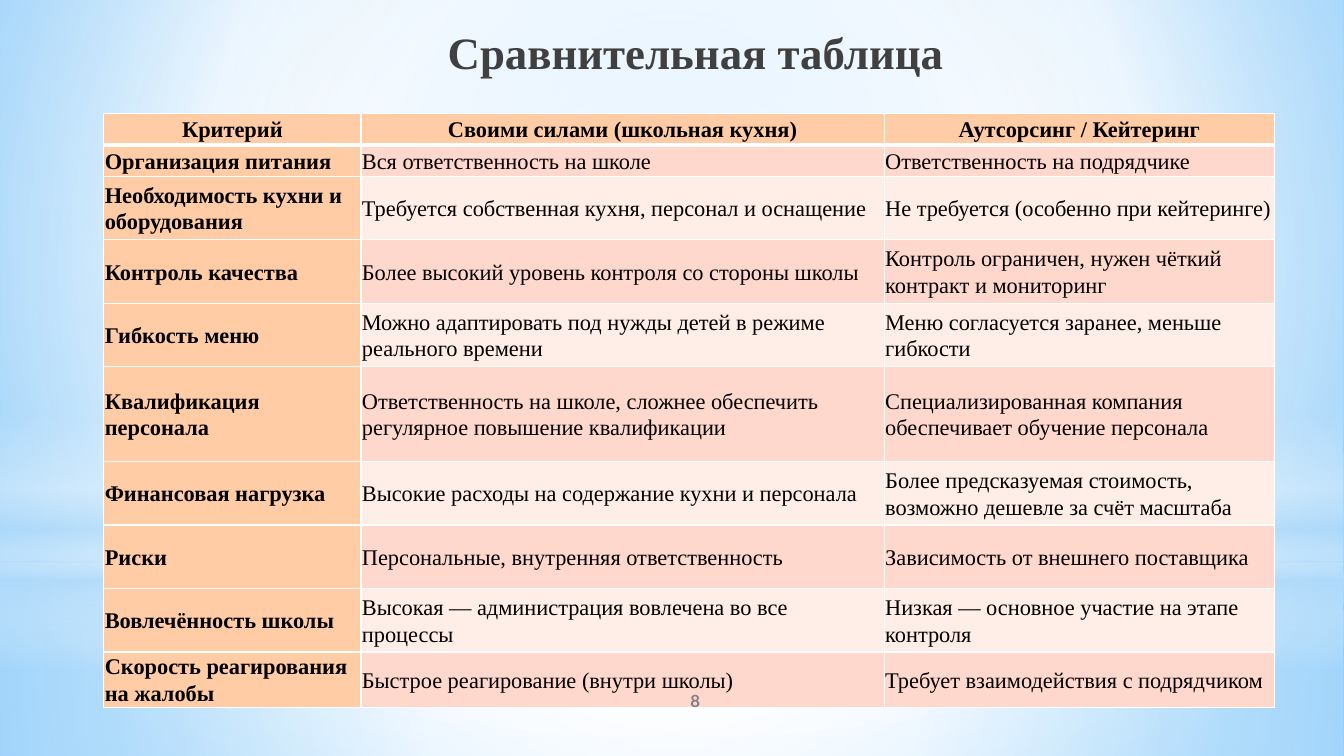
from lxml.etree import SubElement
from pptx import Presentation
from pptx.dml.color import RGBColor
from pptx.enum.shapes import MSO_SHAPE
from pptx.enum.text import MSO_ANCHOR, PP_ALIGN
from pptx.oxml import parse_xml
from pptx.oxml.ns import nsdecls, qn
from pptx.util import Inches, Pt

BLACK = RGBColor(0x00, 0x00, 0x00)
WHITE = RGBColor(0xFF, 0xFF, 0xFF)
DARK = RGBColor(0x40, 0x40, 0x40)
GREY = RGBColor(0x80, 0x80, 0x80)
ORANGE = RGBColor(0xFF, 0xCC, 0xA6)
PINK = RGBColor(0xFF, 0xD8, 0xCD)
PALE_PINK = RGBColor(0xFF, 0xED, 0xE8)
SKY = RGBColor(0xB4, 0xDC, 0xFA)
BLUE = RGBColor(0x9E, 0xD5, 0xFF)
DEEP_BLUE = RGBColor(0x5B, 0xB9, 0xFF)

SERIF = "Times New Roman"
WIDTH, HEIGHT = 13.33, 7.5
CENTRE = (50, 50, 50, 50)

# Each glow: shape, box, stops (position, colour, opacity), centre of the gradient
GLOWS = [
    (MSO_SHAPE.RECTANGLE, (0, 5.58, WIDTH, 1.92),
     [(0, WHITE, 91), (37, WHITE, 76), (100, SKY, 79)], CENTRE),
    (MSO_SHAPE.RECTANGLE, (0, 0, WIDTH, 5.58),
     [(0, WHITE, 89), (48, WHITE, 62), (100, SKY, 79)], CENTRE),
    (MSO_SHAPE.RECTANGLE, (0, 4.12, WIDTH, 2.5),
     [(0, WHITE, 0), (29, WHITE, 30), (45, SKY, 40), (55, WHITE, 26),
      (65, SKY, 60), (100, WHITE, 0)], None),
    (MSO_SHAPE.OVAL, (0, 1.75, WIDTH, 5.58),
     [(0, WHITE, 100), (56, WHITE, 0)], CENTRE),
]

COLUMNS = [2.55, 5.19, 3.87]
ROW_HEIGHTS = [0.31, 0.31, 0.63, 0.63, 0.63, 0.94, 0.63, 0.63, 0.63, 0.54]
ROWS = [
    ("Критерий", "Своими силами (школьная кухня)", "Аутсорсинг / Кейтеринг"),
    ("Организация питания", "Вся ответственность на школе",
     "Ответственность на подрядчике"),
    ("Необходимость кухни и оборудования",
     "Требуется собственная кухня, персонал и оснащение",
     "Не требуется (особенно при кейтеринге)"),
    ("Контроль качества", "Более высокий уровень контроля со стороны школы",
     "Контроль ограничен, нужен чёткий контракт и мониторинг"),
    ("Гибкость меню",
     "Можно адаптировать под нужды детей в режиме реального времени",
     "Меню согласуется заранее, меньше гибкости"),
    ("Квалификация персонала",
     "Ответственность на школе, сложнее обеспечить регулярное повышение квалификации",
     "Специализированная компания обеспечивает обучение персонала"),
    ("Финансовая нагрузка", "Высокие расходы на содержание кухни и персонала",
     "Более предсказуемая стоимость, возможно дешевле за счёт масштаба"),
    ("Риски", "Персональные, внутренняя ответственность",
     "Зависимость от внешнего поставщика"),
    ("Вовлечённость школы", "Высокая — администрация вовлечена во все процессы",
     "Низкая — основное участие на этапе контроля"),
    ("Скорость реагирования на жалобы", "Быстрое реагирование (внутри школы)",
     "Требует взаимодействия с подрядчиком"),
]


def set_gradient(fill, parent, stops, centre):
    """Radial gradient around centre, or a vertical one if centre is None."""
    fill.background()
    grad = parse_xml(f'<a:gradFill {nsdecls("a")} rotWithShape="1"/>')
    gs_list = SubElement(grad, qn("a:gsLst"))
    for position, color, opacity in stops:
        gs = SubElement(gs_list, qn("a:gs"), pos=str(position * 1000))
        clr = SubElement(gs, qn("a:srgbClr"), val=str(color))
        if opacity < 100:
            SubElement(clr, qn("a:alpha"), val=str(opacity * 1000))
    if centre:
        radial = SubElement(grad, qn("a:path"), path="circle")
        sides = {k: str(v * 1000) for k, v in zip("ltrb", centre)}
        SubElement(radial, qn("a:fillToRect"), **sides)
    else:
        SubElement(grad, qn("a:lin"), ang="5400000", scaled="0")
    parent.replace(parent.find(qn("a:noFill")), grad)


def write(tf, text, align, color, **font):
    tf.word_wrap = True
    p = tf.paragraphs[0]
    p.alignment = align
    r = p.add_run()
    r.text = text
    r.font.color.rgb = color
    for name, value in font.items():
        setattr(r.font, name, value)
    return p


def set_borders(cell, widths):
    tc_pr = cell._tc.get_or_add_tcPr()
    for i, (side, width) in enumerate(widths.items()):
        ln = parse_xml(
            f'<a:ln{side} {nsdecls("a")} w="{Pt(width)}"><a:solidFill>'
            f'<a:srgbClr val="{WHITE}"/></a:solidFill></a:ln{side}>')
        tc_pr.insert(i, ln)


def add_backdrop(s):
    fill = s.background.fill
    fill.background()
    set_gradient(fill, s.element.find(".//" + qn("p:bgPr")),
                 [(0, BLUE, 100), (60, WHITE, 100), (100, DEEP_BLUE, 100)],
                 (20, 10, 20, 60))
    for kind, box, stops, centre in GLOWS:
        sp = s.shapes.add_shape(kind, *map(Inches, box))
        sp.shadow.inherit = False
        sp.line.fill.background()
        set_gradient(sp.fill, sp.element.spPr, stops, centre)


def add_title(s, box, text):
    title = s.shapes.title
    title.left, title.top, title.width, title.height = map(Inches, box)
    tf = title.text_frame
    tf.vertical_anchor = MSO_ANCHOR.TOP
    write(tf, text, PP_ALIGN.CENTER, DARK, size=Pt(32), name=SERIF, bold=True)
    # Keep the title in front of the backdrop
    s.shapes._spTree.append(title.element)


def add_comparison(s, box):
    table = s.shapes.add_table(len(ROWS), len(COLUMNS), *map(Inches, box)).table
    for column, width in zip(table.columns, COLUMNS):
        column.width = Inches(width)
    for i, (row, height, texts) in enumerate(zip(table.rows, ROW_HEIGHTS, ROWS)):
        row.height = Inches(height)
        for j, (cell, text) in enumerate(zip(row.cells, texts)):
            heading = i == 0 or j == 0
            for side in ("left", "top", "right", "bottom"):
                setattr(cell, f"margin_{side}", Inches(0.01))
            cell.vertical_anchor = MSO_ANCHOR.MIDDLE
            cell.fill.solid()
            cell.fill.fore_color.rgb = (
                ORANGE if heading else PINK if i % 2 else PALE_PINK)
            set_borders(cell, {"L": 1, "R": 1, "T": 3 if i == 1 else 1,
                               "B": 3 if i == 0 else 1})
            p = write(cell.text_frame, text,
                      PP_ALIGN.LEFT if i else PP_ALIGN.CENTER, BLACK,
                      size=Pt(16), name=SERIF, bold=heading)
            p.line_spacing = 1.07


def add_page_number(s, box, number):
    tf = s.shapes.add_textbox(*map(Inches, box)).text_frame
    tf.vertical_anchor = MSO_ANCHOR.MIDDLE
    write(tf, number, PP_ALIGN.CENTER, GREY, size=Pt(12), name="Lato", bold=True)


def main():
    prs = Presentation()
    prs.slide_width, prs.slide_height = Inches(WIDTH), Inches(HEIGHT)
    s = prs.slides.add_slide(prs.slide_layouts[5])
    add_backdrop(s)
    add_title(s, (1.15, 0.19, 11.5, 1.45), "Сравнительная таблица")
    add_comparison(s, (1.03, 1.13, sum(COLUMNS), sum(ROW_HEIGHTS)))
    add_page_number(s, (5.56, 6.75, 2.67, 0.4), "8")
    prs.save("out.pptx")


if __name__ == "__main__":
    main()
